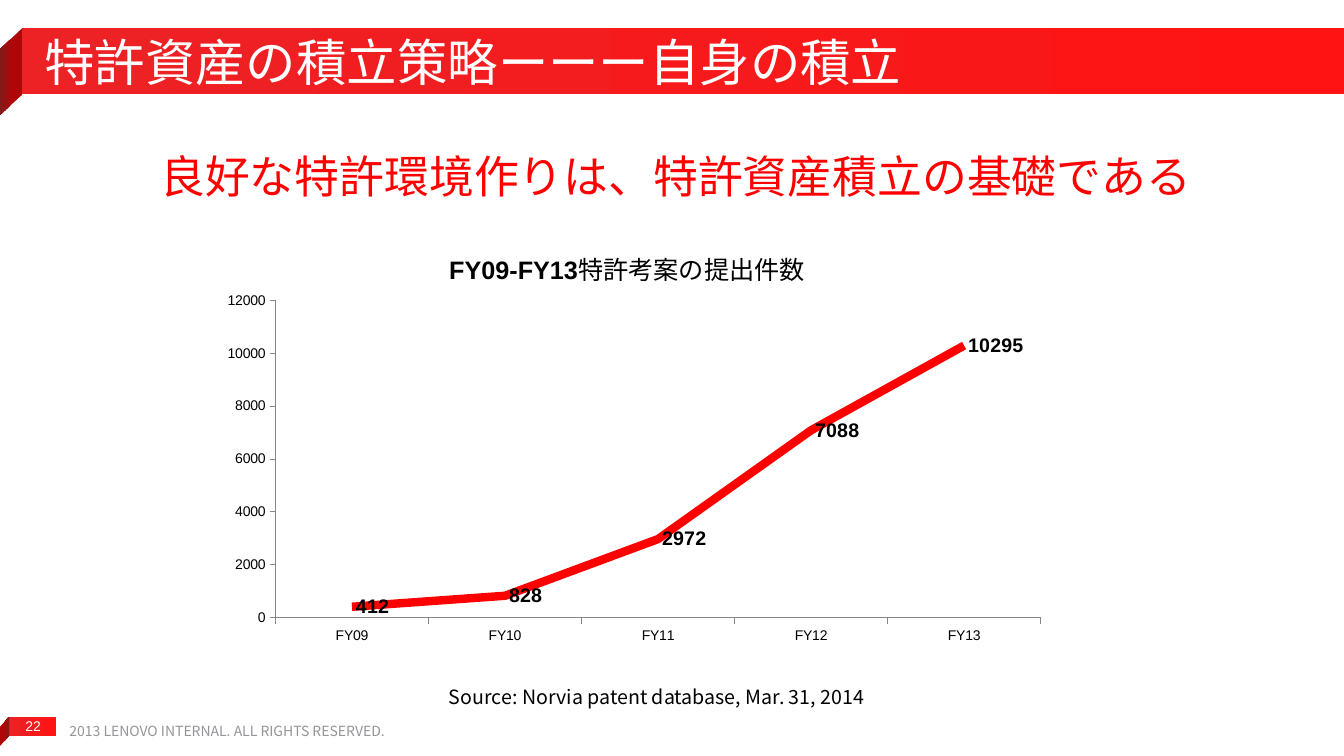
from dataclasses import dataclass

from lxml.etree import SubElement
from pptx import Presentation
from pptx.chart.chart import Chart
from pptx.chart.data import CategoryChartData
from pptx.dml.color import RGBColor
from pptx.dml.fill import FillFormat
from pptx.enum.chart import XL_CHART_TYPE, XL_LABEL_POSITION, XL_TICK_MARK
from pptx.enum.shapes import MSO_SHAPE
from pptx.enum.text import MSO_ANCHOR, PP_ALIGN
from pptx.oxml.ns import qn
from pptx.slide import Slide
from pptx.text.text import Font
from pptx.util import Inches, Pt

COLORS = {
    "banner_start": "EC2225", "banner_end": "FF1313",
    "fold_light": "AF0707", "fold_dark": "7F1B1B",
    "white": "FFFFFF", "black": "000000", "red": "FF0000",
    "footer": "939598", "axis": "878787",
}
LATIN, JAPANESE, CHINESE = "Arial", "Noto Sans CJK JP", "Noto Sans CJK SC"


@dataclass(frozen=True)
class Box:
    left: float
    top: float
    width: float
    height: float

    def lengths(self) -> list[int]:
        return [Inches(n) for n in (self.left, self.top, self.width, self.height)]


@dataclass(frozen=True)
class Fold:
    points: tuple[tuple[float, float], ...]
    angle: int


@dataclass(frozen=True)
class Label:
    text: str
    box: Box
    size: int
    font: str
    color: str
    align: PP_ALIGN = PP_ALIGN.LEFT
    anchor: MSO_ANCHOR = MSO_ANCHOR.TOP
    inset: tuple[float, float] = (0.1, 0.05)
    wrap: bool = True


BANNERS = (Box(0.22, 0.28, 13.11, 0.65), Box(0.09, 7.11, 0.47, 0.19))
FOLDS = (
    Fold(((0, 0.49), (0, 1.14), (0.22, 0.94), (0.22, 0.28)), 180),
    Fold(((0.09, 7.11), (0, 7.21), (0, 7.4), (0.09, 7.3)), 0),
)
LABELS = (
    Label("22", Box(0.11, 7.05, 0.44, 0.3), 10, LATIN, "white",
          PP_ALIGN.CENTER, inset=(0.13, 0.07), wrap=False),
    Label("特許資産の積立策略ーーー自身の積立", Box(0.31, 0.28, 13.02, 0.65), 36,
          JAPANESE, "white", anchor=MSO_ANCHOR.MIDDLE, inset=(0.13, 0.07)),
    Label("2013 LENOVO INTERNAL. ALL RIGHTS RESERVED.",
          Box(0.59, 7.12, 4.22, 0.17), 10, CHINESE, "footer"),
    Label("Source: Norvia patent database, Mar. 31, 2014",
          Box(3.48, 6.75, 6.07, 0.34), 14, CHINESE, "black", PP_ALIGN.CENTER),
    Label("良好な特許環境作りは、特許資産積立の基礎である",
          Box(1.29, 1.43, 10.83, 0.64), 32, JAPANESE, "red", PP_ALIGN.CENTER),
)
CHART_BOX = Box(2.09, 2.22, 8.34, 4.23)
SUBMISSIONS = {"FY09": 412, "FY10": 828, "FY11": 2972, "FY12": 7088, "FY13": 10295}


def rgb(name: str) -> RGBColor:
    return RGBColor.from_string(COLORS[name])


def style_font(font: Font, name: str, size: int, color: str, bold: bool = False) -> None:
    font.name, font.size, font.bold = name, Pt(size), bold
    font.color.rgb = rgb(color)


def set_east_asian_font(run, name: str) -> None:
    SubElement(run.font._element, qn("a:ea")).set("typeface", name)


def fill_gradient(fill: FillFormat, stops: dict[str, float], angle: int) -> None:
    fill.gradient()
    fill.gradient_angle = angle
    for stop, (color, position) in zip(fill.gradient_stops, stops.items()):
        stop.color.rgb = rgb(color)
        stop.position = position


def add_banner(slide: Slide, box: Box) -> None:
    shape = slide.shapes.add_shape(MSO_SHAPE.RECTANGLE, *box.lengths())
    shape.shadow.inherit = False
    shape.line.fill.background()
    fill_gradient(shape.fill, {"banner_start": 0, "banner_end": 1}, 0)


def add_fold(slide: Slide, fold: Fold) -> None:
    start, *others = [(Inches(x), Inches(y)) for x, y in fold.points]
    builder = slide.shapes.build_freeform(*start)
    builder.add_line_segments(others, close=True)
    shape = builder.convert_to_shape()
    shape.shadow.inherit = False
    shape.line.fill.background()
    fill_gradient(shape.fill, {"fold_light": 0.47, "fold_dark": 1}, fold.angle)


def add_label(slide: Slide, label: Label) -> None:
    frame = slide.shapes.add_textbox(*label.box.lengths()).text_frame
    frame.word_wrap = label.wrap
    frame.vertical_anchor = label.anchor
    frame.margin_left = frame.margin_right = Inches(label.inset[0])
    frame.margin_top = frame.margin_bottom = Inches(label.inset[1])
    frame.text = label.text
    paragraph = frame.paragraphs[0]
    paragraph.alignment = label.align
    run = paragraph.runs[0]
    style_font(run.font, label.font, label.size, label.color)
    set_east_asian_font(run, label.font)


def set_layout(parent, index: int, **values: str | float) -> None:
    """Give a chart part a manual layout, as fractions of the chart."""
    for old in parent.findall(qn("c:layout")):
        parent.remove(old)
    layout = SubElement(parent, qn("c:layout"))
    manual = SubElement(layout, qn("c:manualLayout"))
    for tag, value in values.items():
        SubElement(manual, qn(f"c:{tag}")).set("val", str(value))
    parent.insert(index, layout)


def add_chart_title(chart: Chart) -> None:
    chart.has_title = True
    title = chart.chart_title
    paragraph = title.text_frame.paragraphs[0]
    for text, font, bold in (("FY09-FY13", LATIN, True),
                             ("特許考案の提出件数", JAPANESE, False)):
        run = paragraph.add_run()
        run.text = text
        style_font(run.font, font, 18, "black", bold)
        set_east_asian_font(run, JAPANESE)
    set_layout(title._element, 1, xMode="edge", yMode="edge", x=0.28, y=0.05)


def add_submission_chart(slide: Slide) -> None:
    data = CategoryChartData()
    data.categories = list(SUBMISSIONS)
    data.add_series("Series 1", list(SUBMISSIONS.values()))
    chart = slide.shapes.add_chart(
        XL_CHART_TYPE.LINE, *CHART_BOX.lengths(), data).chart
    style_font(chart.font, LATIN, 10, "black")
    chart.has_legend = False
    add_chart_title(chart)

    plot = chart.plots[0]
    plot.vary_by_categories = False
    set_layout(plot._element.getparent(), 0, layoutTarget="inner", xMode="edge",
               yMode="edge", x=0.077, y=0.18, w=0.91, h=0.744)
    for axis in (chart.category_axis, chart.value_axis):
        axis.has_major_gridlines = False
        axis.major_tick_mark = XL_TICK_MARK.OUTSIDE
        axis.minor_tick_mark = XL_TICK_MARK.NONE
        axis.format.line.color.rgb = rgb("axis")
        axis.format.line.width = Pt(0.75)
    chart.value_axis.minimum_scale = 0
    chart.value_axis.maximum_scale = 12000
    chart.value_axis.major_unit = 2000

    series = plot.series[0]
    series.smooth = False
    series.format.line.color.rgb = rgb("red")
    series.format.line.width = Pt(6)
    labels = series.data_labels
    labels.show_value = True
    labels.position = XL_LABEL_POSITION.RIGHT
    style_font(labels.font, LATIN, 14, "black", bold=True)


def main() -> None:
    presentation = Presentation()
    presentation.slide_width, presentation.slide_height = Inches(13.33), Inches(7.5)
    slide = presentation.slides.add_slide(presentation.slide_layouts[6])
    for banner, fold in zip(BANNERS, FOLDS):
        add_banner(slide, banner)
        add_fold(slide, fold)
    for label in LABELS:
        add_label(slide, label)
    add_submission_chart(slide)
    presentation.save("out.pptx")


if __name__ == "__main__":
    main()
